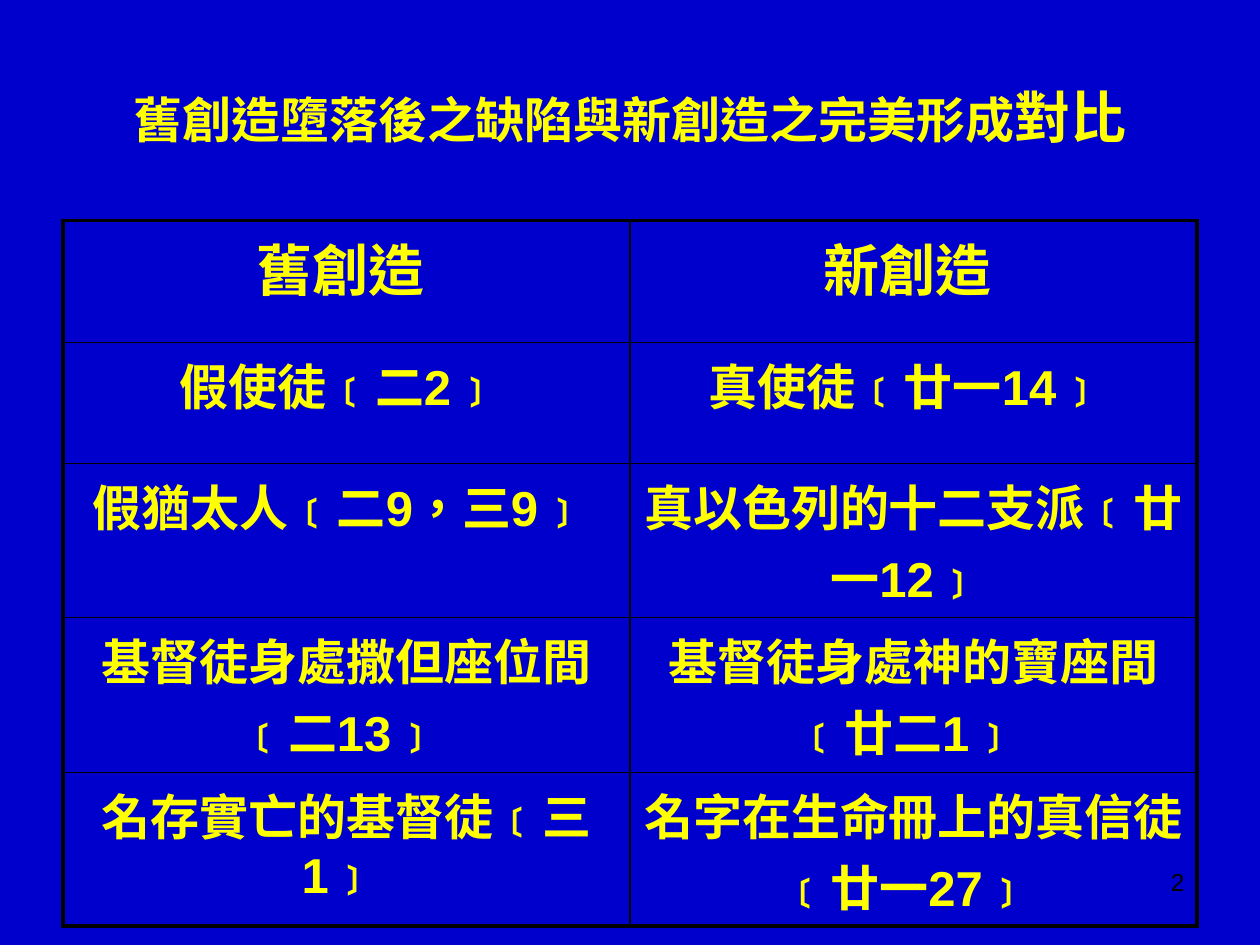
from lxml import etree
from pptx import Presentation
from pptx.dml.color import RGBColor
from pptx.enum.text import MSO_ANCHOR, PP_ALIGN
from pptx.oxml.ns import qn
from pptx.util import Inches, Pt

BLUE = RGBColor(0x00, 0x00, 0xCC)
YELLOW = RGBColor(0xFF, 0xFF, 0x00)
BLACK = RGBColor(0x00, 0x00, 0x00)
CENTER, RIGHT = PP_ALIGN.CENTER, PP_ALIGN.RIGHT
TOP, MIDDLE = MSO_ANCHOR.TOP, MSO_ANCHOR.MIDDLE

TITLE = [("舊創造墮落後之缺陷與新創造之完美形成", 28), ("對比", 32)]
HEADINGS = ["舊創造", "新創造"]
CONTRASTS = [
    ("假使徒﹝二2﹞ ", "真使徒﹝廿一14﹞ "),
    ("假猶太人﹝二9，三9﹞ ", "真以色列的十二支派﹝廿一12﹞ "),
    ("基督徒身處撒但座位間﹝二13﹞ ", "基督徒身處神的寶座間﹝廿二1﹞ "),
    ("名存實亡的基督徒﹝三1﹞ ", "名字在生命冊上的真信徒﹝廿一27﹞ "),
]
ROW_HEIGHTS = [0.97, 0.96, 1.22, 1.23, 1.22]
COLUMN_WIDTH = 4.5
THIN, THICK = 1, 2.25


def write_runs(paragraph, runs, alignment, color, bold):
    paragraph.alignment = alignment
    for text, size in runs:
        run = paragraph.add_run()
        run.text = text
        run.font.color.rgb = color
        for name, value in {"name": "Arial", "size": Pt(size), "bold": bold}.items():
            setattr(run.font, name, value)
        run._r.get_or_add_rPr().set("lang", "zh-TW")


def add_text(slide, box, runs, alignment, anchor, color, bold):
    shape = slide.shapes.add_textbox(*map(Inches, box))
    frame = shape.text_frame
    frame.word_wrap = True
    frame.vertical_anchor = anchor
    write_runs(frame.paragraphs[0], runs, alignment, color, bold)


def set_space_before(paragraph, percent):
    properties = paragraph._p.get_or_add_pPr()
    spacing = etree.SubElement(properties, qn("a:spcBef"))
    etree.SubElement(spacing, qn("a:spcPct"), val=str(percent * 1000))


def set_borders(cell, widths):
    properties = cell._tc.get_or_add_tcPr()
    for index, (side, width) in enumerate(widths.items()):
        line = etree.Element(qn(f"a:ln{side}"), w=str(Pt(width)))
        fill = etree.SubElement(line, qn("a:solidFill"))
        etree.SubElement(fill, qn("a:srgbClr"), val=str(BLACK))
        properties.insert(index, line)


def add_contrast_table(slide):
    rows = [[[(text, 32), (" ", 28)] for text in HEADINGS]]
    rows += [[[(text, 28)] for text in pair] for pair in CONTRASTS]
    last_row, last_column = len(rows) - 1, len(HEADINGS) - 1
    frame = slide.shapes.add_table(
        len(rows), len(HEADINGS), Inches(0.5), Inches(1.75),
        Inches(COLUMN_WIDTH * len(HEADINGS)), Inches(sum(ROW_HEIGHTS)))
    table = frame.table
    table.first_row = table.horz_banding = False
    for column in table.columns:
        column.width = Inches(COLUMN_WIDTH)
    for row_index, row in enumerate(rows):
        table.rows[row_index].height = Inches(ROW_HEIGHTS[row_index])
        for column_index, runs in enumerate(row):
            cell = table.cell(row_index, column_index)
            cell.fill.background()
            outer = {
                "L": column_index == 0,
                "R": column_index == last_column,
                "T": row_index == 0,
                "B": row_index == last_row,
            }
            set_borders(cell, {side: THICK if edge else THIN for side, edge in outer.items()})
            paragraph = cell.text_frame.paragraphs[0]
            write_runs(paragraph, runs, CENTER, YELLOW, True)
            set_space_before(paragraph, 20)


def main():
    presentation = Presentation()
    presentation.slide_width, presentation.slide_height = Inches(10), Inches(7.5)
    slide = presentation.slides.add_slide(presentation.slide_layouts[6])
    slide.background.fill.solid()
    slide.background.fill.fore_color.rgb = BLUE
    add_text(slide, (0.5, 0.3, 9, 1.25), TITLE, CENTER, MIDDLE, YELLOW, True)
    add_contrast_table(slide)
    add_text(slide, (7.17, 6.83, 2.33, 0.52), [("2", 14)], RIGHT, TOP, BLACK, False)
    presentation.save("out.pptx")


if __name__ == "__main__":
    main()
